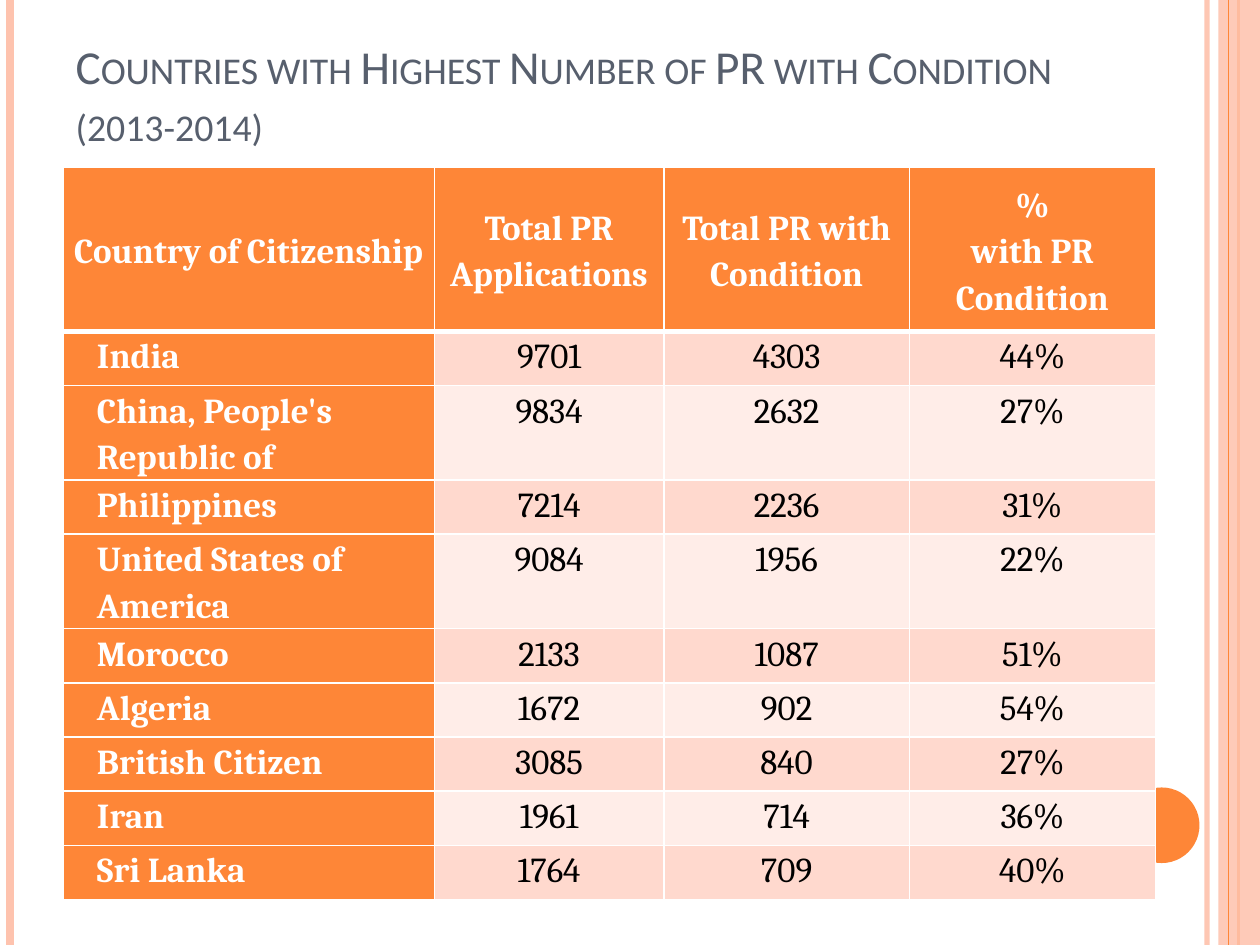
import pptx
import pptx.util
import pptx.dml.color
import pptx.enum.shapes
import pptx.enum.text
import pptx.oxml
import pptx.oxml.ns

TITLE = "Countries with Highest Number of PR with Condition (2013-2014)"
HEADS = ["Country of Citizenship", "Total PR Applications",
         "Total PR with Condition", "%\nwith PR Condition"]
LANDS = [
    ("India", "9701", "4303", "44%"),
    ("China, People's Republic of", "9834", "2632", "27%"),
    ("Philippines", "7214", "2236", "31%"),
    ("United States of America", "9084", "1956", "22%"),
    ("Morocco", "2133", "1087", "51%"),
    ("Algeria", "1672", "902", "54%"),
    ("British Citizen", "3085", "840", "27%"),
    ("Iran", "1961", "714", "36%"),
    ("Sri Lanka", "1764", "709", "40%"),
]
THEME = {
    "main": "FE8637", "pale": "FEC3AE", "white": "FFFFFF", "black": "000000",
    "slate": "575F6D", "bands": ("FFD9CE", "FFEDE8"),
    "head": ("Calibri", 27), "cell": ("Cambria", 20),
}
WIDE, HIGH = 10, 7.5
LINES = [(0.958, "pale", 3, 93), (0.008, "pale", 4.5, 100),
         (0.983, "main", 1.5, 100), (0.975, "main", 0.75, 100)]
COLS = (0.34, 0.21, 0.225, 0.225)
SPAN = 8.67
TALL, ONE, TWO = 1.3, 0.43, 0.75
WRAP = 20

Inch = pptx.util.Inches
Point = pptx.util.Pt
ALIGN = pptx.enum.text.PP_ALIGN
MID = pptx.enum.text.MSO_ANCHOR
KIND = pptx.enum.shapes.MSO_SHAPE
qn = pptx.oxml.ns.qn


def node(tag, rest="", inner=""):
    return pptx.oxml.parse_xml(
        f'<a:{tag} {pptx.oxml.ns.nsdecls("a")} {rest}>{inner}</a:{tag}>')


def paint(fill, tone):
    fill.solid()
    fill.fore_color.rgb = pptx.dml.color.RGBColor.from_string(tone)


def fade(part, share):
    if share < 100:
        tone = next(part.iter(qn("a:srgbClr")))
        tone.append(node("alpha", f'val="{share * 1000}"'))


def write(para, text, face, tone, bold=False):
    run = para.add_run()
    run.text = text
    run.font.name, size = face
    run.font.size = Point(size)
    run.font.bold = bold
    paint(run.font.fill, tone)
    return run


def rule(slide, share, tone, width, clear):
    spot = Inch(WIDE * share)
    line = slide.shapes.add_connector(
        pptx.enum.shapes.MSO_CONNECTOR.STRAIGHT, spot, 0, spot, Inch(HIGH))
    paint(line.line.fill, THEME[tone])
    line.line.width = Point(width)
    fade(line._element.spPr, clear)
    line._element.spPr.append(node("effectLst"))


def block(slide, kind, box, tone, clear=100):
    shape = slide.shapes.add_shape(kind, *map(Inch, box))
    shape.shadow.inherit = False
    paint(shape.fill, THEME[tone])
    shape.line.fill.background()
    fade(shape._element.spPr, clear)


def edge(cell, row):
    prop = cell._tc.get_or_add_tcPr()
    thick = {"L": 1, "R": 1, "T": 3 if row == 1 else 1, "B": 3 if row == 0 else 1}
    ink = f'<a:solidFill><a:srgbClr val="{THEME["white"]}"/></a:solidFill>'
    for side, width in thick.items():
        prop.append(node(f"ln{side}", f'w="{int(Point(width))}"', ink))


def fill_cell(cell, text, row, col):
    head, label = row == 0, col == 0
    bold = head or label
    edge(cell, row)
    paint(cell.fill, THEME["main"] if bold else THEME["bands"][(row - 1) % 2])
    cell.margin_left = cell.margin_right = Inch(0.07)
    cell.margin_top = cell.margin_bottom = 0
    cell.vertical_anchor = MID.MIDDLE if head else MID.TOP
    for step, words in enumerate(text.split("\n")):
        frame = cell.text_frame
        para = frame.add_paragraph() if step else frame.paragraphs[0]
        para.line_spacing = 1.15
        if label and not head:
            prop = para._p.get_or_add_pPr()
            prop.set("marL", str(int(Inch(0.2))))
            prop.set("indent", "0")
        else:
            para.alignment = ALIGN.CENTER
        write(para, words, THEME["cell"], THEME["white" if bold else "black"], bold)


def add_title(slide):
    title = slide.shapes.title
    title.left, title.top, title.width, title.height = map(Inch, (0.5, 0.3, 8.5, 0.95))
    frame = title.text_frame
    frame.word_wrap = True
    frame.auto_size = pptx.enum.text.MSO_AUTO_SIZE.NONE
    frame.vertical_anchor = MID.BOTTOM
    para = frame.paragraphs[0]
    para.alignment = ALIGN.LEFT
    run = write(para, TITLE, THEME["head"], THEME["slate"])
    run._r.get_or_add_rPr().set("cap", "small")
    slide.shapes._spTree.append(title._element)


def add_grid(slide):
    rows = [HEADS] + LANDS
    highs = [TALL] + [TWO if len(land[0]) > WRAP else ONE for land in LANDS]
    grid = slide.shapes.add_table(
        len(rows), len(COLS), Inch(0.5), Inch(1.33), Inch(SPAN), Inch(sum(highs))).table
    for col, share in zip(grid.columns, COLS):
        col.width = Inch(SPAN * share)
    for row, high in zip(grid.rows, highs):
        row.height = Inch(high)
    for r, texts in enumerate(rows):
        for c, text in enumerate(texts):
            fill_cell(grid.cell(r, c), text, r, c)


def main():
    deck = pptx.Presentation()
    deck.slide_width, deck.slide_height = Inch(WIDE), Inch(HIGH)
    slide = deck.slides.add_slide(deck.slide_layouts[5])
    for line in LINES[:3]:
        rule(slide, *line)
    block(slide, KIND.RECTANGLE, (9.67, 0, 0.33, HIGH), "pale", 87)
    rule(slide, *LINES[3])
    block(slide, KIND.OVAL, (8.92, 6.25, 0.6, 0.6), "main")
    add_title(slide)
    add_grid(slide)
    deck.save("out.pptx")


if __name__ == "__main__":
    main()
